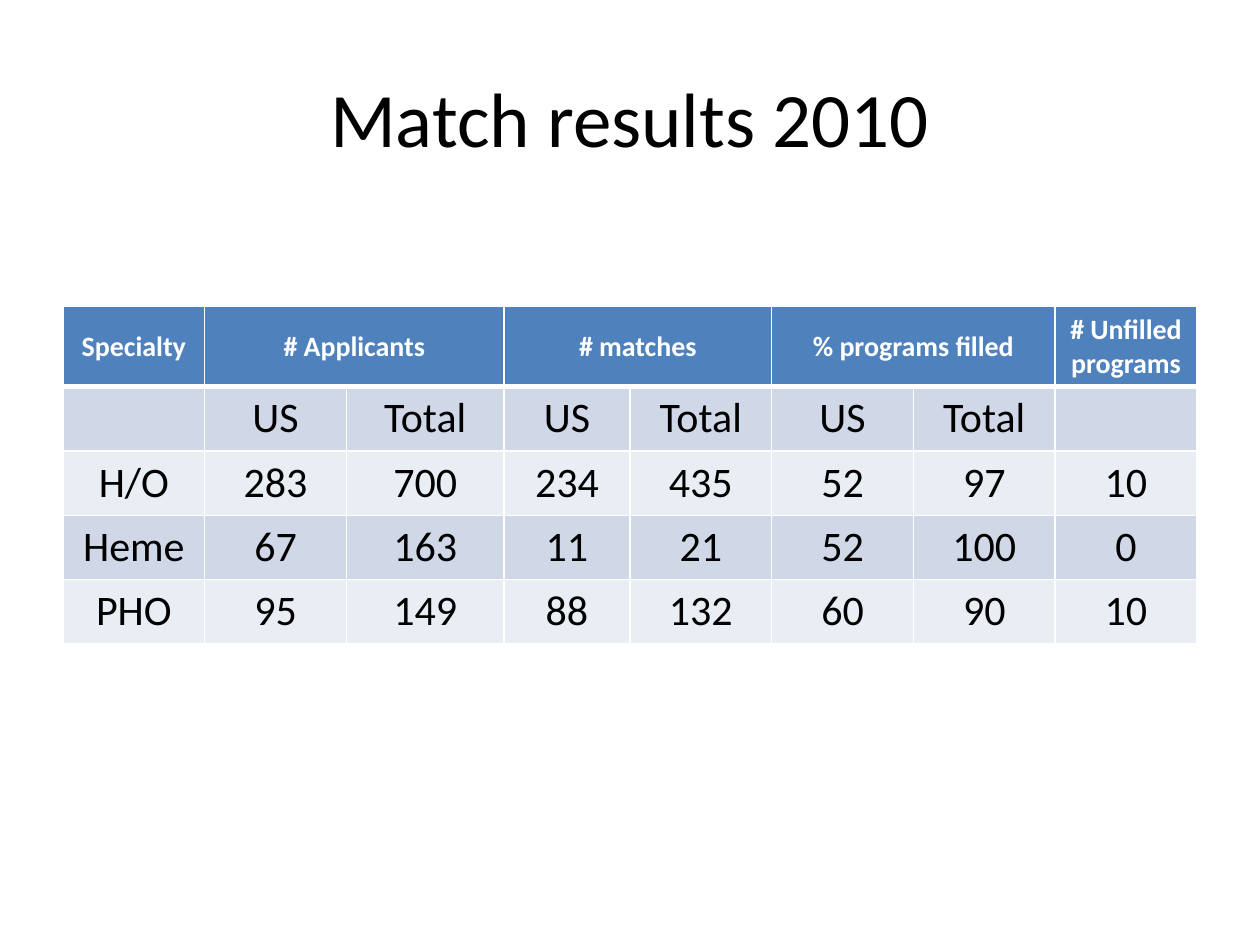
from dataclasses import dataclass

from lxml import etree
from pptx import Presentation
from pptx import util as u
from pptx.dml.color import RGBColor
from pptx.enum import text
from pptx.oxml import ns


@dataclass(frozen=True)
class Theme:
    """Colours, font and type sizes of the slide."""
    font: str = "Calibri"
    ink: str = "000000"
    white: str = "FFFFFF"
    header: str = "4F81BD"
    bands: tuple = ("D0D8E8", "E9EDF4")
    title_size: int = 44
    header_size: int = 16
    body_size: int = 24
    rule: int = 1
    header_rule: int = 3


THEME = Theme()
GROUPS = ["# Applicants", "# matches", "% programs filled"]
HEADER = ["Specialty", *(c for g in GROUPS for c in (g, "")), "# Unfilled programs"]
BODY = [
    ["", *["US", "Total"] * len(GROUPS), ""],
    ["H/O", "283", "700", "234", "435", "52", "97", "10"],
    ["Heme", "67", "163", "11", "21", "52", "100", "0"],
    ["PHO", "95", "149", "88", "132", "60", "90", "10"],
]
COLUMN_SHARES = [9, 9, 10, 8, 9, 9, 9, 9]


def write(tf, words, size, color=THEME.ink, bold=False):
    """Put one centred, formatted paragraph in a text frame."""
    p = tf.paragraphs[0]
    p.alignment = text.PP_ALIGN.CENTER
    p.font.size = u.Pt(size)
    if words:
        r = p.add_run()
        r.text = words
        r.font.name = THEME.font
        r.font.size = u.Pt(size)
        r.font.bold = bold
        r.font.color.rgb = RGBColor.from_string(color)


def set_borders(cell, top, bottom):
    """Give a cell white borders with the given top and bottom widths."""
    props = cell._tc.get_or_add_tcPr()
    widths = {"L": THEME.rule, "R": THEME.rule, "T": top, "B": bottom}
    for i, (side, width) in enumerate(widths.items()):
        line = etree.Element(ns.qn(f"a:ln{side}"), w=str(u.Pt(width)))
        fill = etree.SubElement(line, ns.qn("a:solidFill"))
        etree.SubElement(fill, ns.qn("a:srgbClr"), val=THEME.white)
        props.insert(i, line)


def add_title(s, words, left, top, width, height):
    """Place the slide title in its box."""
    tf = s.shapes.add_textbox(left, top, width, height).text_frame
    tf.word_wrap = True
    tf.vertical_anchor = text.MSO_ANCHOR.MIDDLE
    write(tf, words, THEME.title_size)


def add_results(s, left, top, width, header_height, row_height):
    """Place the results table with grouped headings and banded rows."""
    rows = [HEADER, *BODY]
    height = header_height + row_height * len(BODY)
    table = s.shapes.add_table(len(rows), len(HEADER), left, top, width, height).table
    for column, share in zip(table.columns, COLUMN_SHARES):
        column.width = int(width * share / sum(COLUMN_SHARES))
    for i, values in enumerate(rows):
        head = i == 0
        table.rows[i].height = header_height if head else row_height
        for j, value in enumerate(values):
            cell = table.cell(i, j)
            cell.fill.solid()
            color = THEME.header if head else THEME.bands[(i - 1) % 2]
            cell.fill.fore_color.rgb = RGBColor.from_string(color)
            set_borders(cell, THEME.header_rule if i == 1 else THEME.rule,
                        THEME.header_rule if head else THEME.rule)
            if head:
                cell.vertical_anchor = text.MSO_ANCHOR.MIDDLE
                write(cell.text_frame, value, THEME.header_size, THEME.white, bold=True)
            else:
                write(cell.text_frame, value, THEME.body_size)
    for k in range(len(GROUPS)):
        first = 1 + 2 * k
        table.cell(0, first).merge(table.cell(0, first + 1))


def main():
    """Build and save the slide."""
    prs = Presentation()
    prs.slide_width, prs.slide_height = u.Inches(10), u.Inches(7.5)
    s = prs.slides.add_slide(prs.slide_layouts[6])
    left, width = u.Inches(0.5), u.Inches(9)
    add_title(s, "Match results 2010", left, u.Inches(0.3), width, u.Inches(1.25))
    add_results(s, left, u.Inches(2.43), width, u.Inches(0.64), u.Inches(0.51))
    prs.save("out.pptx")


if __name__ == "__main__":
    main()
